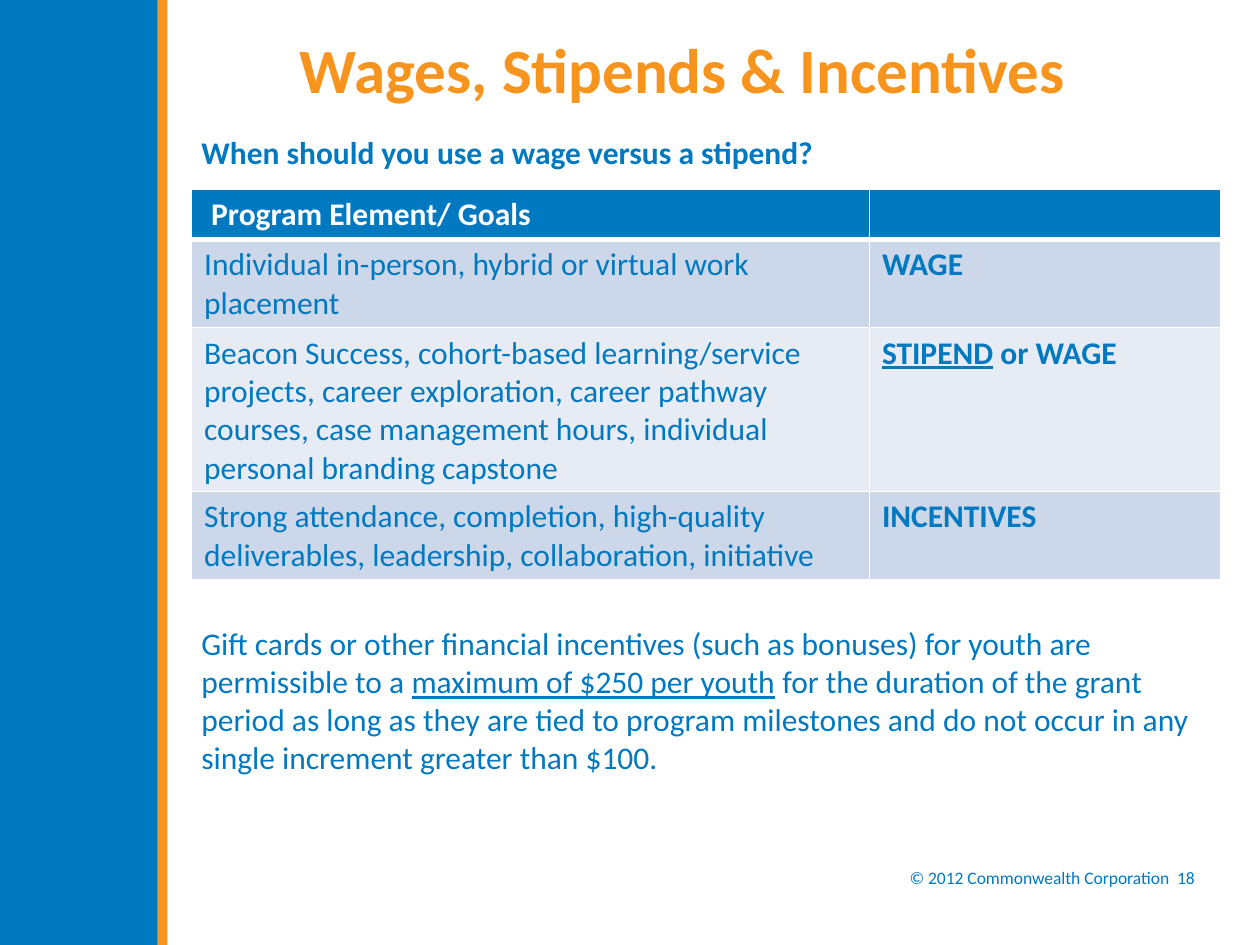
from lxml import etree
from pptx import Presentation
from pptx.dml.color import RGBColor
from pptx.enum.shapes import MSO_SHAPE
from pptx.enum.text import MSO_ANCHOR, PP_ALIGN
from pptx.oxml.ns import qn
from pptx.util import Inches, Pt

RECT = MSO_SHAPE.RECTANGLE
MIDDLE = MSO_ANCHOR.MIDDLE
CENTER, RIGHT = PP_ALIGN.CENTER, PP_ALIGN.RIGHT

WIDE, HIGH = Inches(10), Inches(7.5)
FONT = "Calibri"
COLORS = {"blue": "0079C1", "orange": "F7941E", "white": "FFFFFF",
          "band": "CCD7E9", "pale": "E7ECF4"}
COLS = (5.38, 2.79)
ROWS = (0.4, 0.7, 1.3, 0.7)

# Each text is a list of (words, bold, underlined) runs
GOALS = [
    ([(" Program Element/ Goals", True, False)], []),
    ([("Individual in-person, hybrid or virtual work placement", False, False)],
     [("WAGE", True, False)]),
    ([("Beacon Success, cohort-based learning/service projects, career "
       "exploration, career pathway courses, case management hours, "
       "individual personal branding capstone", False, False)],
     [("STIPEND", True, True), (" or WAGE", True, False)]),
    ([("Strong attendance, completion, high-quality deliverables, leadership, "
       "collaboration, initiative", False, False)],
     [("INCENTIVES", True, False)]),
]
ASK = [("When should you use a wage versus a stipend?", True, False)]
RULE = [
    ("Gift cards or other financial incentives (such as bonuses) for youth are "
     "permissible to a ", False, False),
    ("maximum of $250 per youth", False, True),
    (" for the duration of the grant period as long as they are tied to program "
     "milestones and do not occur in any single increment greater than $100.",
     False, False),
]


def rgb(name):
    return RGBColor.from_string(COLORS[name])


def paint(part, name):
    part.fill.solid()
    part.fill.fore_color.rgb = rgb(name)


def write(para, runs, size=18, color="blue"):
    para.font.size = Pt(size)
    for words, bold, under in runs:
        run = para.add_run()
        run.text = words
        font = run.font
        font.name, font.size = FONT, Pt(size)
        font.bold, font.underline = bold, under
        font.color.rgb = rgb(color)


def edge(cell, widths):
    """Draw white borders; widths are points by side, in schema order."""
    props = cell._tc.get_or_add_tcPr()
    for spot, (side, width) in enumerate(widths.items()):
        line = etree.Element(qn("a:ln" + side), w=str(Pt(width)))
        fill = etree.SubElement(line, qn("a:solidFill"))
        etree.SubElement(fill, qn("a:srgbClr"), val=COLORS["white"])
        props.insert(spot, line)


def add_side(slide, wide, high):
    # The blue bar leaves a thin orange stripe at its right
    for share, color in ((1, "orange"), (0.94, "blue")):
        bar = slide.shapes.add_shape(RECT, 0, 0, int(wide * share), high)
        bar.shadow.inherit = False
        paint(bar, color)
        bar.line.fill.background()


def add_title(slide, left, top, wide, high):
    title = slide.shapes.title
    title.left, title.top, title.width, title.height = left, top, wide, high
    frame = title.text_frame
    frame.vertical_anchor = MIDDLE
    para = frame.paragraphs[0]
    para.alignment = CENTER
    write(para, [("Wages, Stipends & Incentives", True, False)], 36, "orange")


def add_body(slide, left, top, wide, high):
    box = slide.shapes.add_textbox(left, top, wide, high)
    paint(box, "white")
    frame = box.text_frame
    frame.word_wrap = True
    write(frame.paragraphs[0], ASK)
    # The space before the rule leaves room for the table
    para = frame.add_paragraph()
    para.space_before = Pt(259)
    write(para, RULE)


def add_goals(slide, left, top, wide, high):
    table = slide.shapes.add_table(len(ROWS), len(COLS), left, top,
                                   wide, high).table
    for col, share in zip(table.columns, COLS):
        col.width = int(wide * share / sum(COLS))
    for row, share in zip(table.rows, ROWS):
        row.height = int(high * share / sum(ROWS))
    for r, texts in enumerate(GOALS):
        fill = "blue" if r == 0 else ("band" if r % 2 else "pale")
        for c, runs in enumerate(texts):
            cell = table.cell(r, c)
            paint(cell, fill)
            write(cell.text_frame.paragraphs[0], runs,
                  color="blue" if r else "white")
            edge(cell, {"L": 1, "R": 1, "T": 3 if r == 1 else 1,
                        "B": 3 if r == 0 else 1})


def add_foot(slide, left, top, wide, high):
    frame = slide.shapes.add_textbox(left, top, wide, high).text_frame
    frame.word_wrap = True
    para = frame.paragraphs[0]
    para.alignment = RIGHT
    write(para, [(" © 2012 Commonwealth Corporation  18", False, False)], 10)


def main():
    deck = Presentation()
    deck.slide_width, deck.slide_height = WIDE, HIGH
    slide = deck.slides.add_slide(deck.slide_layouts[5])
    side = Inches(1.33)
    add_side(slide, side, HIGH)
    add_foot(slide, Inches(5.75), Inches(6.83), Inches(3.83), Inches(0.32))
    add_title(slide, side, Inches(-0.08), Inches(8.17), Inches(1.25))
    add_body(slide, Inches(1.5), Inches(1.01), Inches(8.33), Inches(5.25))
    add_goals(slide, Inches(1.52), Inches(1.5), Inches(sum(COLS)),
              Inches(sum(ROWS)))
    deck.save("out.pptx")


if __name__ == "__main__":
    main()
